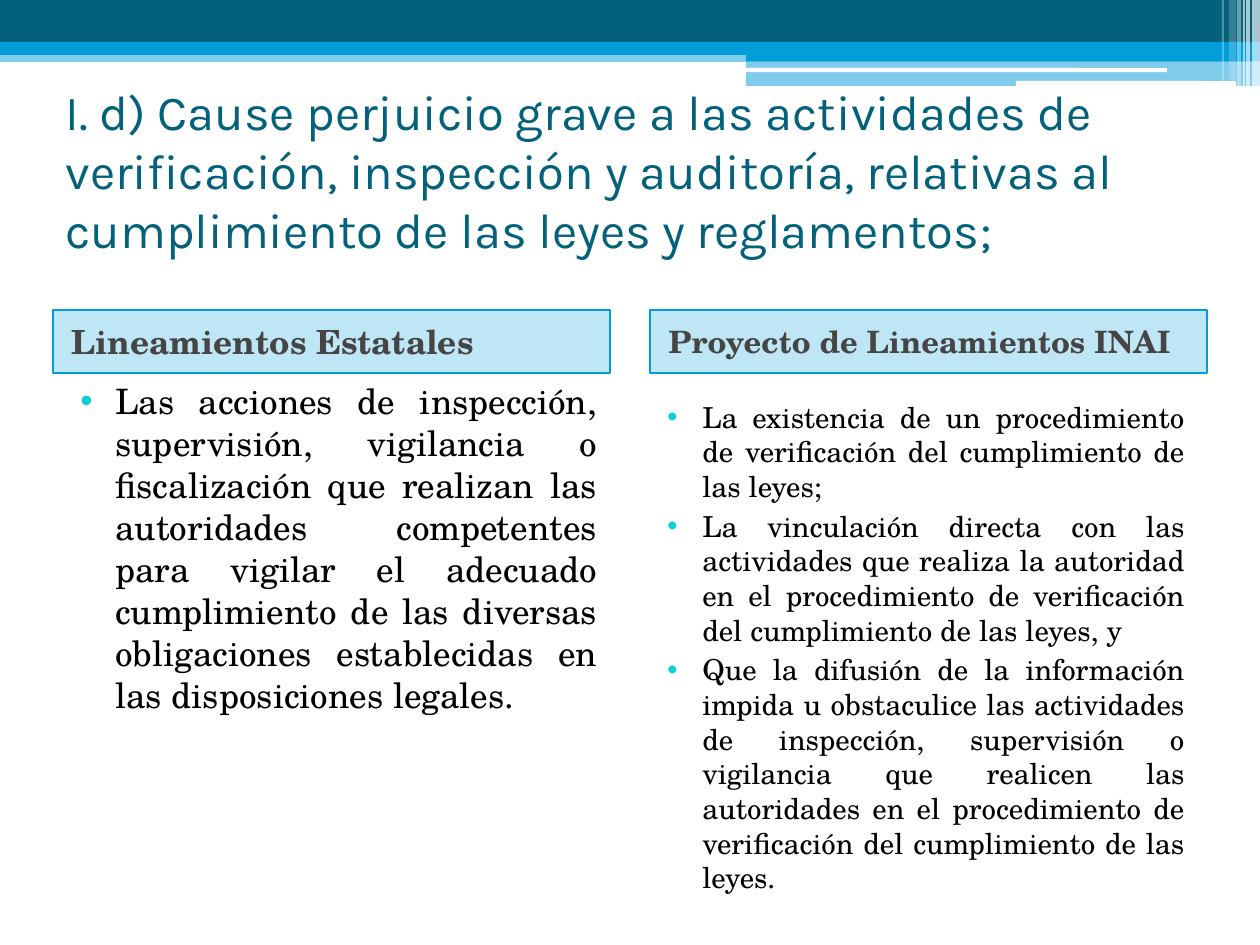
"""Builds the slide comparing state guidelines with the INAI draft guidelines."""
from lxml import etree
from pptx import Presentation
from pptx.dml.color import RGBColor
from pptx.enum.shapes import MSO_SHAPE
from pptx.enum.text import MSO_ANCHOR, MSO_AUTO_SIZE, PP_ALIGN
from pptx.oxml.ns import qn
from pptx.util import Pt

RECT, ROUNDED = MSO_SHAPE.RECTANGLE, MSO_SHAPE.ROUNDED_RECTANGLE
TOP, MIDDLE = MSO_ANCHOR.TOP, MSO_ANCHOR.MIDDLE
LEFT, JUSTIFY = PP_ALIGN.LEFT, PP_ALIGN.JUSTIFY
NO_AUTOFIT = MSO_AUTO_SIZE.NONE
TITLE_ONLY = 5

TEAL = RGBColor(0x04, 0x61, 0x7B)
BLUE = RGBColor(0x00, 0x9D, 0xD9)
CYAN = RGBColor(0x0B, 0xD0, 0xD9)
GRAY = RGBColor(0x45, 0x45, 0x45)
WHITE = RGBColor(0xFF, 0xFF, 0xFF)
BLACK = RGBColor(0x00, 0x00, 0x00)
TITLE_FONT, BODY_FONT = "Karla", "TeX Gyre Schola"

TITLE = ("I. d) Cause perjuicio grave a las actividades de verificación, inspección y "
         "auditoría, relativas al cumplimiento de las leyes y reglamentos;")
TITLE_BOX = (53, 106, 1155, 128)

COLUMNS = [
    {"heading": "Lineamientos Estatales", "heading_size": 19,
     "heading_box": (53, 310, 557, 63),
     "points": [
         "Las acciones de inspección, supervisión, vigilancia o fiscalización que realizan "
         "las autoridades competentes para vigilar el adecuado cumplimiento de las diversas "
         "obligaciones establecidas en las disposiciones legales."],
     "points_size": 20, "points_box": (53, 373, 557, 535)},
    {"heading": "Proyecto de Lineamientos INAI", "heading_size": 17.6,
     "heading_box": (650, 310, 557, 63),
     "points": [
         "La existencia de un procedimiento de verificación del cumplimiento de las leyes;",
         "La vinculación directa con las actividades que realiza la autoridad en el "
         "procedimiento de verificación del cumplimiento de las leyes, y",
         "Que la difusión de la información impida u obstaculice las actividades de "
         "inspección, supervisión o vigilancia que realicen las autoridades en el "
         "procedimiento de verificación del cumplimiento de las leyes."],
     "points_size": 16.5, "points_box": (640, 393, 557, 525)},
]

BANDS = [
    (RECT, (0, 50, 1260, 12), BLUE, 50),
    (RECT, (0, 0, 1260, 43), TEAL, 100),
    (RECT, (0, 42, 1260, 13), BLUE, 100),
    (RECT, (746, 49, 514, 12), BLUE, 100),
    (RECT, (746, 61, 514, 25), BLUE, 50),
    (ROUNDED, (745, 68, 422, 4), WHITE, 100),
    (ROUNDED, (1016, 81, 220, 5), WHITE, 100),
]
STRIPES = [(1252, 8, 86, 65), (1246, 4, 86, 65), (1243, 2, 86, 60),
           (1237, 4, 86, 40), (1229, 7, 81, 20), (1222, 2, 81, 30)]


def px(length):
    return round(length * 914400 / 126)


def place(part, box):
    part.left, part.top, part.width, part.height = map(px, box)


def add_block(slide, kind, box, color, opacity):
    block = slide.shapes.add_shape(kind, *map(px, box))
    block.shadow.inherit = False
    block.line.fill.background()
    block.fill.solid()
    block.fill.fore_color.rgb = color
    if opacity < 100:
        tint = block.fill._xPr.find(".//" + qn("a:srgbClr"))
        etree.SubElement(tint, qn("a:alpha"), val=str(opacity * 1000))
    return block


def set_frame(frame, anchor):
    frame.word_wrap = True
    frame.auto_size = NO_AUTOFIT
    frame.vertical_anchor = anchor


def write(paragraph, text, font, size, color, align, bold=False):
    paragraph.alignment = align
    run = paragraph.add_run()
    run.text = text
    run.font.name, run.font.size, run.font.bold = font, Pt(size), bold
    run.font.color.rgb = color


def indent(paragraph, margin, first_line):
    paragraph.space_before = Pt(3)
    properties = paragraph._p.get_or_add_pPr()
    properties.set("marL", str(px(margin)))
    properties.set("indent", str(px(first_line)))
    return properties


def add_bullet(properties):
    bullet_color = etree.SubElement(properties, qn("a:buClr"))
    etree.SubElement(bullet_color, qn("a:srgbClr"), val=str(CYAN))
    etree.SubElement(properties, qn("a:buFont"), typeface="Arial")
    etree.SubElement(properties, qn("a:buChar"), char="•")


def add_heading(slide, column):
    heading = add_block(slide, RECT, column["heading_box"], BLUE, 25)
    heading.line.color.rgb = BLUE
    heading.line.width = Pt(1)
    set_frame(heading.text_frame, MIDDLE)
    paragraph = heading.text_frame.paragraphs[0]
    write(paragraph, column["heading"], BODY_FONT, column["heading_size"], GRAY, LEFT, True)
    indent(paragraph, 6, 0)


def add_points(slide, column):
    frame = slide.shapes.add_textbox(*map(px, column["points_box"])).text_frame
    set_frame(frame, TOP)
    for number, point in enumerate(column["points"]):
        paragraph = frame.add_paragraph() if number else frame.paragraphs[0]
        write(paragraph, point, BODY_FONT, column["points_size"], BLACK, JUSTIFY)
        add_bullet(indent(paragraph, 50, -35))


def main():
    deck = Presentation()
    deck.slide_width, deck.slide_height = px(1260), px(945)
    slide = deck.slides.add_slide(deck.slide_layouts[TITLE_ONLY])

    for band in BANDS:
        add_block(slide, *band)
    for left, width, height, opacity in STRIPES:
        add_block(slide, RECT, (left, 0, width, height), WHITE, opacity)

    title = slide.shapes.title
    place(title, TITLE_BOX)
    set_frame(title.text_frame, MIDDLE)
    write(title.text_frame.paragraphs[0], TITLE, TITLE_FONT, 28, TEAL, LEFT)

    for column in COLUMNS:
        add_heading(slide, column)
        add_points(slide, column)

    deck.save("out.pptx")


if __name__ == "__main__":
    main()
